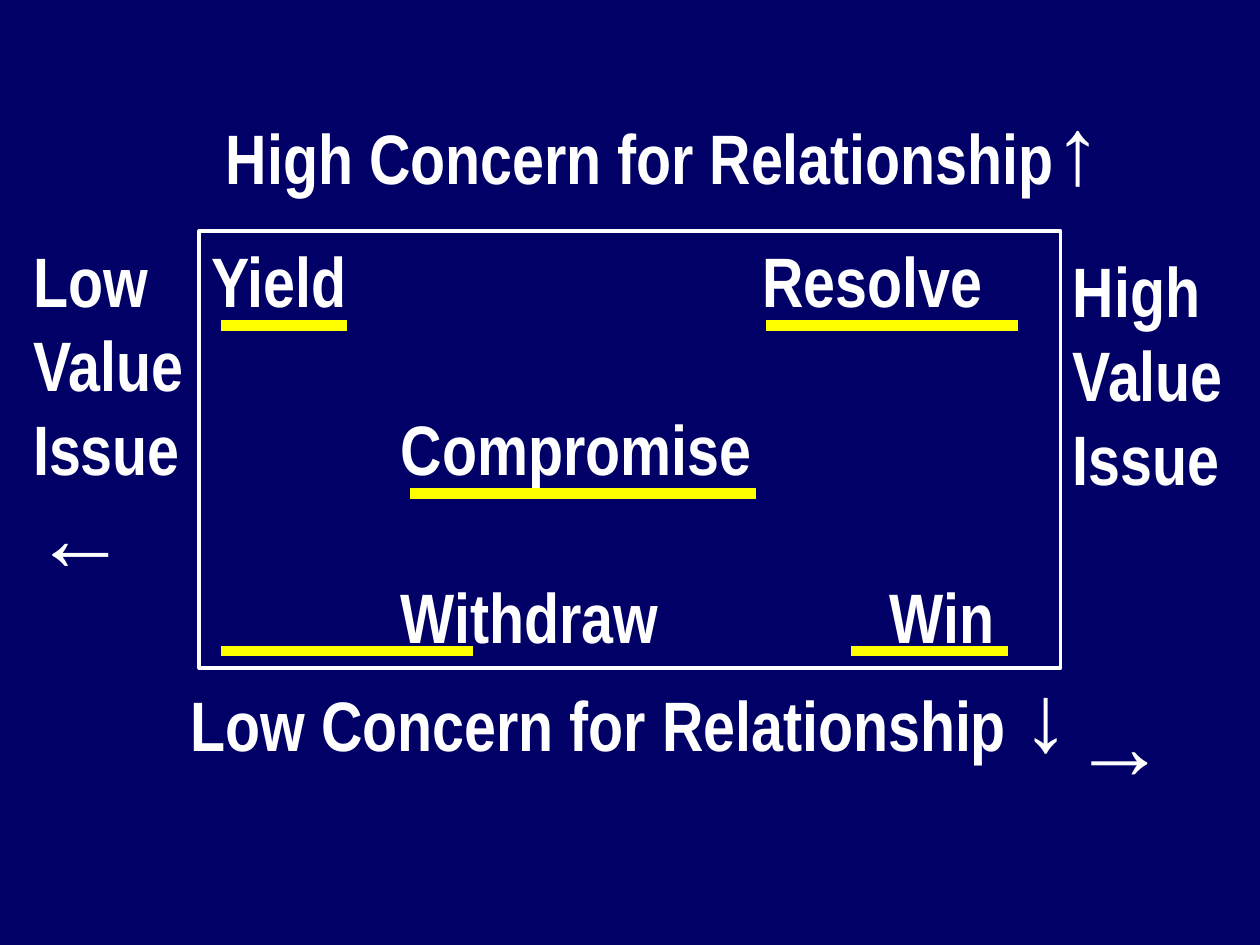
"""Build a conflict-style grid of relationship concern against issue value."""
from dataclasses import dataclass

from lxml import etree
from pptx import Presentation
from pptx.dml.color import RGBColor
from pptx.enum.shapes import MSO_CONNECTOR, MSO_SHAPE
from pptx.enum.text import MSO_ANCHOR, MSO_AUTO_SIZE, PP_ALIGN
from pptx.oxml.ns import qn
from pptx.util import Cm, Pt

RECT = MSO_SHAPE.RECTANGLE
STRAIGHT = MSO_CONNECTOR.STRAIGHT
LEFT = PP_ALIGN.LEFT
TOP = MSO_ANCHOR.TOP
NO_FIT = MSO_AUTO_SIZE.NONE


@dataclass(frozen=True)
class Theme:
    back: RGBColor = RGBColor(0x00, 0x00, 0x66)
    text: RGBColor = RGBColor(0xFF, 0xFF, 0xFF)
    accent: RGBColor = RGBColor(0xFF, 0xFF, 0x00)
    font: str = "Arial Narrow"
    arrow_font: str = "Arial"
    size: Pt = Pt(40)
    arrow: Pt = Pt(54)
    border: Pt = Pt(2.25)
    rule: Pt = Pt(6)


theme = Theme()


def set_frame(tf):
    """Apply the shared text frame settings."""
    values = {"word_wrap": True, "auto_size": NO_FIT, "vertical_anchor": TOP}
    for name, value in values.items():
        setattr(tf, name, value)


def add_text(p, runs, before=0, tabs=()):
    """Fill a paragraph with (text, size, font) runs and tab stops."""
    p.alignment = LEFT
    p.space_before = Pt(before)
    if tabs:
        tab_list = etree.SubElement(p._p.get_or_add_pPr(), qn("a:tabLst"))
        for pos in tabs:
            etree.SubElement(tab_list, qn("a:tab"), pos=str(Cm(pos)), algn="l")
    for text, size, font in runs:
        r = p.add_run()
        r.text = text
        for name, value in {"size": size, "name": font, "bold": True}.items():
            setattr(r.font, name, value)
        r.font.color.rgb = theme.text


prs = Presentation()
prs.slide_width, prs.slide_height = Cm(25.4), Cm(19.05)
s = prs.slides.add_slide(prs.slide_layouts[1])
s.background.fill.solid()
s.background.fill.fore_color.rgb = theme.back
title = s.shapes.title
title._element.getparent().remove(title._element)

body = s.placeholders[1]
bounds = {"left": 0, "top": 0, "width": prs.slide_width, "height": prs.slide_height}
for name, value in bounds.items():
    setattr(body, name, value)
tf = body.text_frame
set_frame(tf)
tf.margin_top = Cm(1.82)
p = tf.paragraphs[0]
add_text(p, [("High Concern for Relationship", theme.size, theme.font),
             ("↑", theme.arrow, theme.font)])
pPr = p._p.get_or_add_pPr()
pPr.set("marL", str(Cm(4.3)))
pPr.set("indent", "0")
etree.SubElement(pPr, qn("a:buNone"))

box = s.shapes.add_shape(RECT, Cm(4.02), Cm(4.66), Cm(17.36), Cm(8.81))
box.shadow.inherit = False
box.fill.background()
box.line.color.rgb = theme.text
box.line.width = theme.border
tf = box.text_frame
set_frame(tf)
styles = [
    ("Yield\tResolve", 0, (11.1,)),
    ("\tCompromise", 48, (3.81,)),
    ("\tWithdraw\tWin", 48, (3.81, 13.67)),
]
for i, (text, before, tabs) in enumerate(styles):
    p = tf.add_paragraph() if i else tf.paragraphs[0]
    add_text(p, [(text, theme.size, theme.font)], before, tabs)

labels = [
    ((3.6, 13.12, 20.11, 2.54), "Low Concern for Relationship ", "↓", theme.font, None),
    ((0.42, 4.66, 3.6, 7.62), "Low Value Issue", "←", theme.font, 0),
    ((21.38, 4.87, 3.6, 7.62), "High Value Issue", "→", theme.arrow_font, 106),
]
for at, text, arrow, font, gap in labels:
    tf = s.shapes.add_textbox(*map(Cm, at)).text_frame
    set_frame(tf)
    p = tf.paragraphs[0]
    add_text(p, [(text, theme.size, theme.font)])
    if gap is not None:
        p = tf.add_paragraph()
    add_text(p, [(arrow, theme.arrow, font)], gap or 0)

underlines = [
    (20.53, 15.45, 6.56),
    (9.53, 4.45, 13.12),
    (6.99, 4.45, 6.56),
    (20.32, 17.15, 13.12),
    (15.24, 8.26, 9.95),
]
for start, end, y in underlines:
    line = s.shapes.add_connector(STRAIGHT, Cm(start), Cm(y), Cm(end), Cm(y))
    line.line.color.rgb = theme.accent
    line.line.width = theme.rule
    etree.SubElement(line._element.spPr, qn("a:effectLst"))

prs.save("out.pptx")
